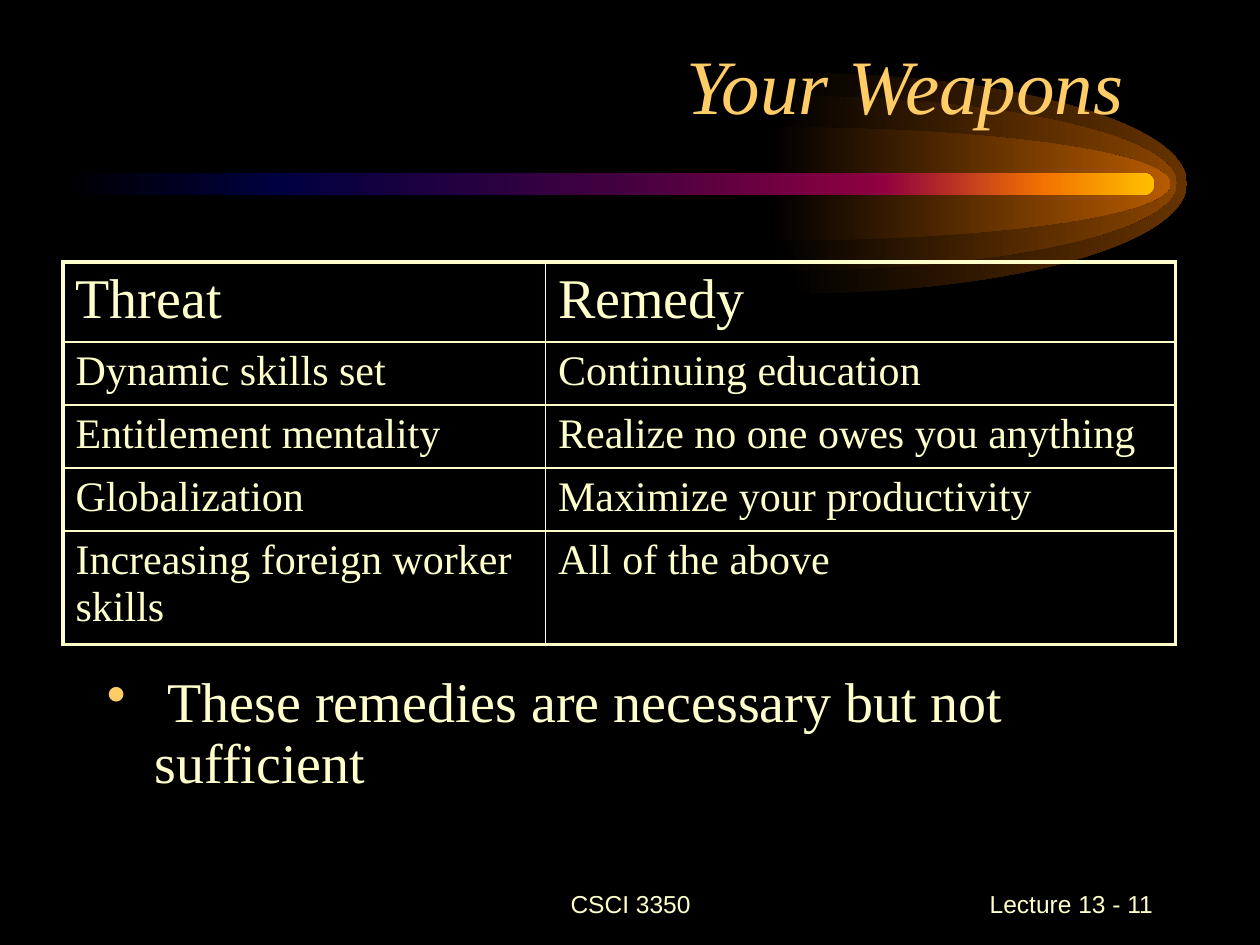
import lxml.etree
import pptx
import pptx.dml.color
import pptx.enum.shapes
import pptx.enum.text
import pptx.oxml.ns
import pptx.util

Inches = pptx.util.Inches
Pt = pptx.util.Pt
qn = pptx.oxml.ns.qn
ALIGN = pptx.enum.text.PP_ALIGN
ANCHOR = pptx.enum.text.MSO_ANCHOR

COLORS = {
    "background": "000000",
    "text": "FFFFCC",
    "accent": "FFCC66",
    "outer_glow": "663300",
    "middle_glow": "894400",
    "inner_glow": "B75B00",
    "navy": "000040",
    "plum": "400040",
    "crimson": "8F0040",
    "orange": "F27300",
    "gold": "FFBF00",
}
SERIF = "Times New Roman"
SANS = "Arial"

# center x, top, height, color
GLOWS = [
    (6.29, 0.58, 1.75, "outer_glow"),
    (6.21, 0.76, 1.39, "middle_glow"),
    (6.16, 1.01, 0.90, "inner_glow"),
]
GLOW_LENGTH = 3.13
ARC_HANDLE = 0.55  # Bezier handle of a quarter ellipse, as a share of its radius
TAIL_STOPS = [(0, "background"), (20, "navy"), (50, "plum"),
              (75, "crimson"), (90, "orange"), (100, "gold")]

REMEDIES = [
    ("Threat", "Remedy"),
    ("Dynamic skills set", "Continuing education"),
    ("Entitlement mentality", "Realize no one owes you anything"),
    ("Globalization", "Maximize your productivity"),
    ("Increasing foreign worker skills", "All of the above"),
]
COLUMN_WIDTHS = [3.83, 5]
ROW_HEIGHTS = [0.63, 0.5, 0.5, 0.5, 0.9]


def rgb(name):
    return pptx.dml.color.RGBColor.from_string(COLORS[name])


def style_font(paragraph, size, face=SERIF, color="text", italic=False):
    font = paragraph.font
    font.size = Pt(size)
    font.name = face
    font.italic = italic
    font.color.rgb = rgb(color)


def fill_gradient(shape, stops):
    """Fill from left to right with (percent, color name) stops, no outline."""
    shape.shadow.inherit = False
    shape.line.fill.background()
    shape.fill.gradient()
    shape.fill.gradient_angle = 0
    stop_list = shape._element.spPr.find(qn("a:gradFill")).find(qn("a:gsLst"))
    stop_list.clear()
    for percent, color in stops:
        stop = lxml.etree.SubElement(stop_list, qn("a:gs"), pos=str(percent * 1000))
        lxml.etree.SubElement(stop, qn("a:srgbClr"), val=COLORS[color])


def curve_segment(segment, handles, left, top):
    """Turn a straight freeform segment into a cubic curve with two handles."""
    segment.tag = qn("a:cubicBezTo")
    for index, (x, y) in enumerate(handles):
        point = lxml.etree.Element(
            qn("a:pt"), x=str(Inches(x) - left), y=str(Inches(y) - top))
        segment.insert(index, point)


def add_glow(slide, center_x, top, height, color):
    """Right half of an ellipse, fading out to the left."""
    radius = height / 2
    middle, bottom, tip = top + radius, top + height, center_x + GLOW_LENGTH
    corners = [(tip, middle), (center_x - 0.05, bottom), (center_x, middle)]
    builder = slide.shapes.build_freeform(Inches(center_x), Inches(top))
    builder.add_line_segments(
        [(Inches(x), Inches(y)) for x, y in corners], close=True)
    glow = builder.convert_to_shape()

    handle_x = center_x + ARC_HANDLE * GLOW_LENGTH
    handle_y = ARC_HANDLE * radius
    upper, lower = list(glow._element.spPr.iter(qn("a:lnTo")))[:2]
    curve_segment(upper, [(handle_x, top), (tip, middle - handle_y)],
                  glow.left, glow.top)
    curve_segment(lower, [(tip, middle + handle_y), (handle_x, bottom)],
                  glow.left, glow.top)
    fill_gradient(glow, [(0, "background"), (100, color)])


def add_comet(slide):
    for glow in GLOWS:
        add_glow(slide, *glow)
    tail = slide.shapes.add_shape(
        pptx.enum.shapes.MSO_SHAPE.ROUNDED_RECTANGLE,
        Inches(0.5), Inches(1.37), Inches(8.66), Inches(0.18))
    tail.adjustments[0] = 0.5
    fill_gradient(tail, TAIL_STOPS)


def add_text(slide, text, left, top, width, height, align, anchor, size,
             margin_top=0.05, **style):
    box = slide.shapes.add_textbox(
        Inches(left), Inches(top), Inches(width), Inches(height))
    frame = box.text_frame
    frame.word_wrap = True
    frame.vertical_anchor = anchor
    frame.margin_top = Inches(margin_top)
    paragraph = frame.paragraphs[0]
    paragraph.text = text
    paragraph.alignment = align
    style_font(paragraph, size, **style)
    return paragraph


def add_bullet(paragraph, indent):
    paragraph.line_spacing = 0.9
    properties = paragraph._p.get_or_add_pPr()
    properties.set("marL", str(Inches(indent)))
    properties.set("indent", str(-Inches(indent)))
    bullet_color = lxml.etree.Element(qn("a:buClr"))
    lxml.etree.SubElement(bullet_color, qn("a:srgbClr"), val=COLORS["accent"])
    bullet = lxml.etree.Element(qn("a:buChar"), char="•")
    position = properties.index(properties.find(qn("a:lnSpc"))) + 1
    properties[position:position] = [bullet_color, bullet]


def set_border(cell, side, width):
    line = lxml.etree.SubElement(
        cell._tc.get_or_add_tcPr(), qn(f"a:ln{side}"), w=str(Pt(width)))
    fill = lxml.etree.SubElement(line, qn("a:solidFill"))
    lxml.etree.SubElement(fill, qn("a:srgbClr"), val=COLORS["text"])


def add_remedy_table(slide):
    row_count, column_count = len(ROW_HEIGHTS), len(COLUMN_WIDTHS)
    table = slide.shapes.add_table(
        row_count, column_count, Inches(0.5), Inches(2.08),
        Inches(sum(COLUMN_WIDTHS)), Inches(sum(ROW_HEIGHTS))).table
    table.first_row = False
    table.horz_banding = False
    for column, width in zip(table.columns, COLUMN_WIDTHS):
        column.width = Inches(width)
    for row, height in zip(table.rows, ROW_HEIGHTS):
        row.height = Inches(height)

    for r, entries in enumerate(REMEDIES):
        size = 32 if r == 0 else 24
        for c, entry in enumerate(entries):
            cell = table.cell(r, c)
            cell.text = entry
            paragraph = cell.text_frame.paragraphs[0]
            paragraph.space_before = Pt(0.2 * size)
            style_font(paragraph, size)
            on_edge = {"L": c == 0, "R": c == column_count - 1,
                       "T": r == 0, "B": r == row_count - 1}
            for side, outer in on_edge.items():
                set_border(cell, side, 2.25 if outer else 1)
            cell.fill.background()


def main():
    presentation = pptx.Presentation()
    presentation.slide_width = Inches(10)
    presentation.slide_height = Inches(7.5)
    slide = presentation.slides.add_slide(presentation.slide_layouts[6])
    slide.background.fill.solid()
    slide.background.fill.fore_color.rgb = rgb("background")

    add_comet(slide)
    add_text(slide, "CSCI 3350", 3.42, 6.92, 3.17, 0.5,
             ALIGN.CENTER, ANCHOR.MIDDLE, 14, face=SANS)
    add_text(slide, "Lecture 13 - 11", 7.17, 6.92, 2.08, 0.5,
             ALIGN.RIGHT, ANCHOR.MIDDLE, 14, face=SANS)
    add_text(slide, "Your Weapons ", 0.67, 0.25, 8.5, 0.83,
             ALIGN.RIGHT, ANCHOR.BOTTOM, 44, color="accent", italic=True)
    conclusion = add_text(
        slide, " These remedies are necessary but not sufficient",
        0.75, 1.83, 8.5, 4.92, ALIGN.LEFT, ANCHOR.TOP, 32, margin_top=3.52)
    add_bullet(conclusion, 0.38)
    add_remedy_table(slide)

    presentation.save("out.pptx")


if __name__ == "__main__":
    main()
